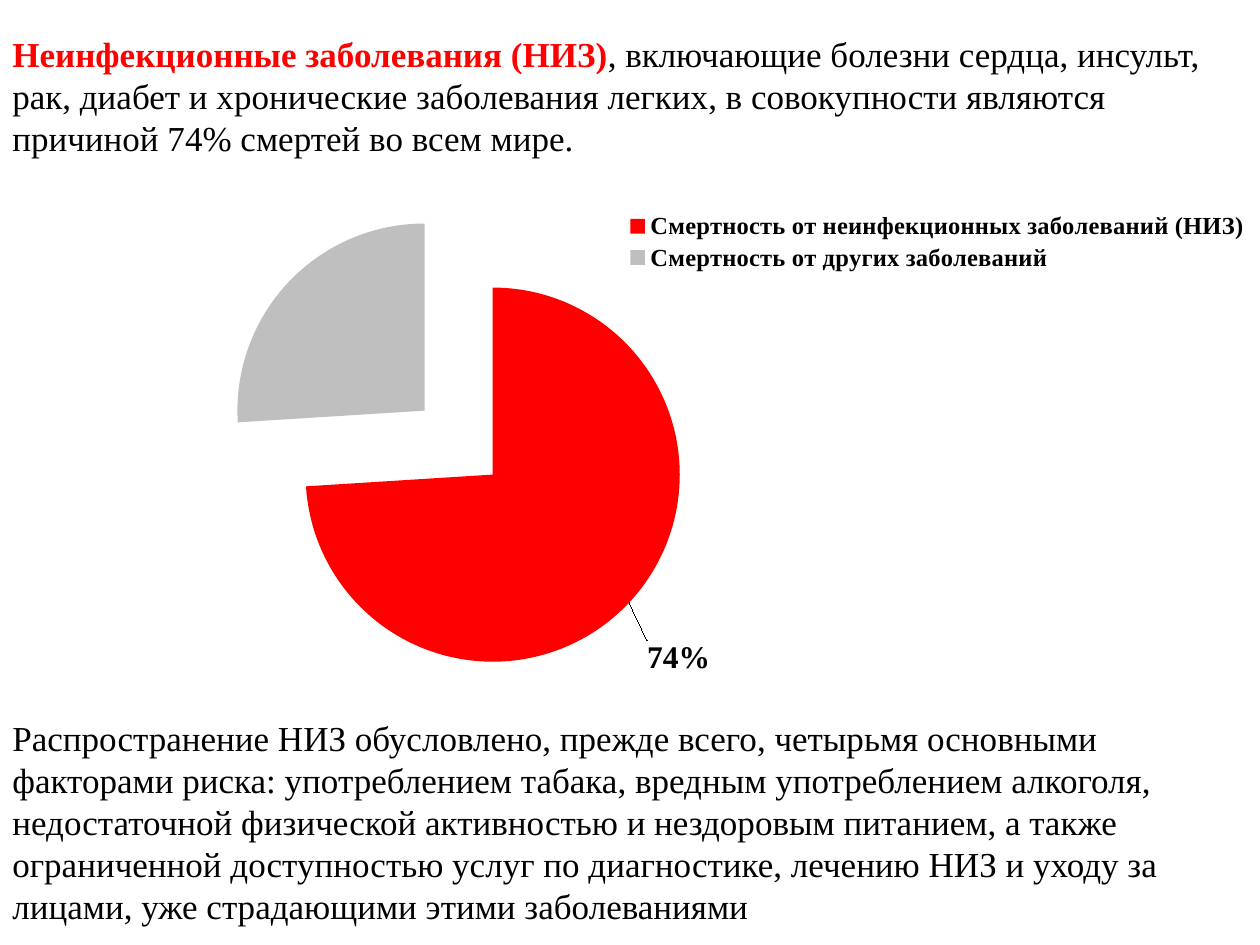
from dataclasses import dataclass

from lxml.etree import Element, SubElement
from pptx import Presentation
from pptx.chart.data import CategoryChartData
from pptx.dml.color import RGBColor
from pptx.enum.chart import XL_CHART_TYPE, XL_LABEL_POSITION, XL_LEGEND_POSITION
from pptx.enum.text import MSO_ANCHOR
from pptx.oxml.ns import qn
from pptx.util import Inches, Pt

WIDE, HIGH = 10, 7.5
FONT = "Times New Roman"
HUES = {"red": "FF0000", "grey": "BFBFBF", "black": "000000"}


@dataclass
class Run:
    text: str
    hue: str = "black"
    bold: bool = False


@dataclass
class Block:
    top: float
    tall: float
    runs: list[Run]


@dataclass
class Slice:
    name: str
    share: float
    hue: str


BLOCKS = [
    Block(0.21, 1.18, [
        Run("Неинфекционные заболевания (НИЗ)", "red", True),
        Run(", включающие болезни сердца, инсульт, рак, диабет и хронические "
            "заболевания легких, в совокупности являются причиной 74% смертей "
            "во всем мире."),
    ]),
    Block(5.64, 1.86, [
        Run("Распространение НИЗ обусловлено, прежде всего, четырьмя основными "
            "факторами риска: употреблением табака, вредным употреблением "
            "алкоголя, недостаточной физической активностью и нездоровым "
            "питанием, а также ограниченной доступностью услуг по диагностике, "
            "лечению НИЗ и уходу за лицами, уже страдающими этими заболеваниями"),
    ]),
]
SLICES = [
    Slice("Смертность от неинфекционных заболеваний (НИЗ)", 0.74, "red"),
    Slice("Смертность от других заболеваний", 0.26, "grey"),
]


def tint(name: str) -> RGBColor:
    return RGBColor.from_string(HUES[name])


def style(font, size: int, bold: bool) -> None:
    font.name, font.size, font.bold = FONT, Pt(size), bold
    font.color.rgb = tint("black")


def frame(**parts) -> Element:
    node = Element(qn("c:layout"))
    inner = SubElement(node, qn("c:manualLayout"))
    for key, val in parts.items():
        SubElement(inner, qn(f"c:{key}")).set("val", str(val))
    return node


def place(area, **parts) -> None:
    for old in area.findall(qn("c:layout")):
        area.remove(old)
    area.insert(0, frame(**parts))


def write(slide, block: Block) -> None:
    box = slide.shapes.add_textbox(
        0, Inches(block.top), Inches(WIDE), Inches(block.tall))
    body = box.text_frame
    body.word_wrap = True
    body.vertical_anchor = MSO_ANCHOR.TOP
    para = body.paragraphs[0]
    para.space_before = Pt(4)
    para.font.name, para.font.size = FONT, Pt(20)
    for part in block.runs:
        run = para.add_run()
        run.text = part.text
        run.font.bold = part.bold
        run.font.color.rgb = tint(part.hue)


def draw(slide, parts: list[Slice]) -> None:
    data = CategoryChartData(number_format="0%")
    data.categories = [part.name for part in parts]
    data.add_series("Series 1", [part.share for part in parts])
    chart = slide.shapes.add_chart(
        XL_CHART_TYPE.PIE, Inches(-0.01), Inches(1.62),
        Inches(WIDE), Inches(HIGH / 2), data).chart
    chart.has_title = False
    style(chart.font, 18, True)

    chart.has_legend = True
    key = chart.legend
    key.position = XL_LEGEND_POSITION.RIGHT
    key.include_in_layout = False
    style(key.font, 14, True)
    key._element.find(qn("c:legendPos")).addnext(frame(
        xMode="edge", yMode="edge", x=0.49, y=0.01, w=0.51, h=0.14))

    place(chart._chartSpace.chart.plotArea, layoutTarget="inner",
          xMode="edge", yMode="edge", x=0, y=0.01, w=0.73, h=0.99)

    plot = chart.plots[0]
    plot.vary_by_categories = True
    pie = plot.series[0]
    burst = Element(qn("c:explosion"))
    burst.set("val", "25")
    pie._element.find(qn("c:tx")).addnext(burst)
    for spot, part in enumerate(parts):
        fill = pie.points[spot].format.fill
        fill.solid()
        fill.fore_color.rgb = tint(part.hue)

    pie.data_labels.show_value = False
    label = pie.points[0].data_label
    label.position = XL_LABEL_POSITION.OUTSIDE_END
    style(label.font, 18, True)
    node = pie._element.find(qn("c:dLbls")).find(qn("c:dLbl"))
    node.find(qn("c:idx")).addnext(frame(x=0.01, y=0.07))


def main() -> None:
    deck = Presentation()
    deck.slide_width, deck.slide_height = Inches(WIDE), Inches(HIGH)
    slide = deck.slides.add_slide(deck.slide_layouts[6])
    draw(slide, SLICES)
    for block in BLOCKS:
        write(slide, block)
    deck.save("out.pptx")


if __name__ == "__main__":
    main()
